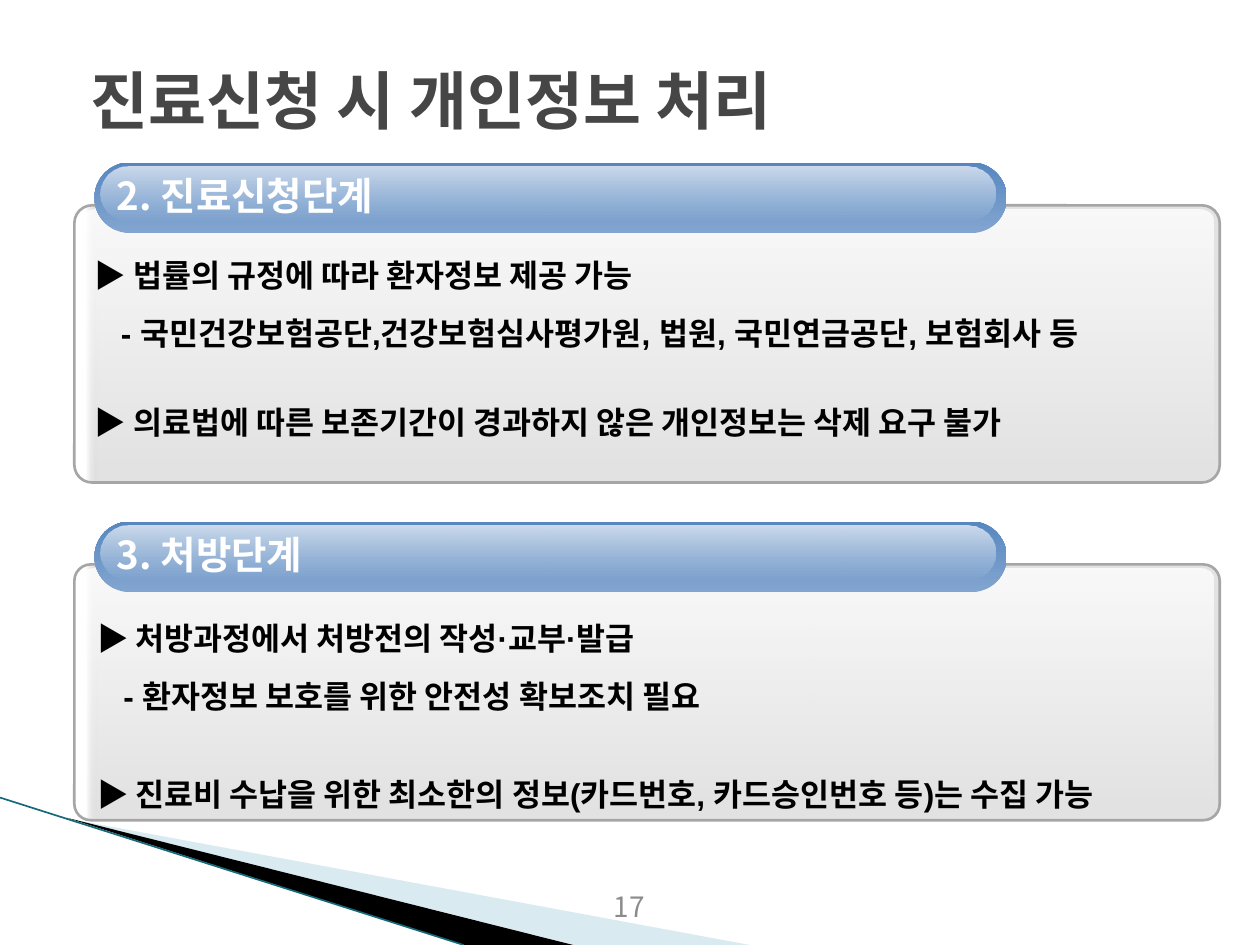
from lxml import etree
from pptx import Presentation
from pptx.dml.color import RGBColor
from pptx.enum.shapes import MSO_CONNECTOR, MSO_SHAPE
from pptx.enum.text import MSO_ANCHOR, MSO_AUTO_SIZE, PP_ALIGN
from pptx.oxml.ns import qn
from pptx.util import Inches, Pt

ROUNDED = MSO_SHAPE.ROUNDED_RECTANGLE
STRAIGHT = MSO_CONNECTOR.STRAIGHT
TOP, MIDDLE = MSO_ANCHOR.TOP, MSO_ANCHOR.MIDDLE
LEFT, CENTER = PP_ALIGN.LEFT, PP_ALIGN.CENTER
NO_AUTOFIT = MSO_AUTO_SIZE.NONE

COLUMNS, ROWS = 100, 75
CELL = Inches(10) // COLUMNS
KOREAN, LATIN = "Noto Sans CJK KR", "Arial"
COLORS = {
    "white": "FFFFFF", "black": "000000", "title": "464646", "number": "8C8C8C",
    "panel": "BFBFBF", "border": "A6A6A6", "pill_light": "82A5D0",
    "pill_dark": "5887C0", "wedge": "A0CBDC", "teal": "16697A",
}
SECTIONS = [
    {"box": (5.9, 12.9, 90.9, 25.4), "body_at": (0.6, 6.3), "heading": "2. 진료신청단계",
     "gap": 24, "lines": [
         "▶ 법률의 규정에 따라 환자정보 제공 가능",
         "- 국민건강보험공단,건강보험심사평가원, 법원, 국민연금공단, 보험회사 등",
         "▶ 의료법에 따른 보존기간이 경과하지 않은 개인정보는 삭제 요구 불가"]},
    {"box": (5.9, 41.4, 90.9, 23.7), "body_at": (0.8, 6.6), "heading": "3. 처방단계",
     "gap": 29, "lines": [
         "▶ 처방과정에서 처방전의 작성·교부·발급",
         "- 환자정보 보호를 위한 안전성 확보조치 필요",
         "▶ 진료비 수납을 위한 최소한의 정보(카드번호, 카드승인번호 등)는 수집 가능"]},
]


def grid(*cells):
    return [round(cell * CELL) for cell in cells]


def color(name):
    return RGBColor.from_string(COLORS[name])


def set_alpha(fill_color, percent):
    """Set the opacity of a colour element (a:srgbClr)."""
    etree.SubElement(fill_color, qn("a:alpha")).set("val", str(percent * 1000))


def add_rounded(slide, box, adjustment, stops, angle, line=None):
    """Add a gradient panel; each stop is (position, colour, opacity)."""
    shape = slide.shapes.add_shape(ROUNDED, *grid(*box))
    shape.shadow.inherit = False
    shape.adjustments[0] = adjustment
    shape.fill.gradient()
    shape.fill.gradient_angle = angle
    for stop, (position, name, opacity) in zip(shape.fill.gradient_stops, stops):
        stop.position = position
        stop.color.rgb = color(name)
    elements = shape.element.spPr.iter(qn("a:srgbClr"))
    for element, (position, name, opacity) in zip(list(elements), stops):
        set_alpha(element, opacity)
    if line:
        shape.line.color.rgb = color(line)
        shape.line.width = Pt(1.5)
    else:
        shape.line.fill.background()


def write(shape, box, lines, size, name, font=KOREAN, bold=True, anchor=MIDDLE,
          align=LEFT, spacing=None):
    """Place a text shape, fill it with lines and return its paragraphs."""
    shape.left, shape.top, shape.width, shape.height = grid(*box)
    frame = shape.text_frame
    frame.word_wrap = True
    frame.auto_size = NO_AUTOFIT
    frame.vertical_anchor = anchor
    frame.text = "\n".join(lines)
    for paragraph in frame.paragraphs:
        paragraph.alignment = align
        paragraph.space_before = Pt(0)
        if spacing:
            paragraph.line_spacing = Pt(spacing)
        run_font = paragraph.runs[0].font
        run_font.size, run_font.bold, run_font.name = Pt(size), bold, font
        run_font.color.rgb = color(name)
        properties = paragraph.runs[0]._r.get_or_add_rPr()
        etree.SubElement(properties, qn("a:ea")).set("typeface", KOREAN)
    return frame.paragraphs


def add_text(slide, box, text, **formats):
    return write(slide.shapes.add_textbox(*grid(*box)), box, [text], **formats)


def add_wedge(slide, points, name, opacity=100):
    builder = slide.shapes.build_freeform(*grid(*points[0]))
    builder.add_line_segments([grid(*point) for point in points[1:]])
    shape = builder.convert_to_shape()
    shape.shadow.inherit = False
    shape.fill.solid()
    shape.fill.fore_color.rgb = color(name)
    set_alpha(next(shape.element.spPr.iter(qn("a:srgbClr"))), opacity)
    shape.line.fill.background()


def add_corner(slide):
    """Draw the wedges that cross the lower left corner."""
    add_wedge(slide, [(5.5, 65), (59.5, ROWS), (45.6, ROWS)], "wedge", 40)
    add_wedge(slide, [(5.3, 64.9), (45.5, ROWS), (36.8, ROWS)], "black")
    line = slide.shapes.add_connector(STRAIGHT, *grid(0, 63.3, 36.8, ROWS))
    line.line.color.rgb = color("teal")
    line.line.width = Pt(0.95)
    etree.SubElement(line.element.spPr, qn("a:effectLst"))


def add_heading(slide, box, text):
    left, top, width, height = box
    add_rounded(slide, box, 0.5, [(0, "pill_light", 100), (1, "pill_dark", 100)], 90)
    add_rounded(slide, (left + 0.5, top + 0.3, width - 1.4, height - 1.3), 0.5,
                [(0, "white", 71), (1, "white", 0)], 270)
    add_text(slide, (left + 0.8, top + 1.1, width - 3.4, 3.8), text,
             size=22, name="white", spacing=20)


def write_body(slide, placeholder, box, lines, gap):
    """Write a main point, its detail and, after a gap, a second main point."""
    slide.shapes.element.append(placeholder.element)
    paragraphs = write(placeholder, box, lines, size=18, name="black", font=LATIN,
                       anchor=TOP, spacing=26)
    for paragraph, before, margin, indent in zip(
            paragraphs, (0, 6, gap), (3.1, 2.1, 3.1), (-3.1, 0, -3.1)):
        paragraph.space_before, paragraph.space_after = Pt(before), Pt(1)
        properties = paragraph._p.get_or_add_pPr()
        properties.set("marL", str(grid(margin)[0]))
        properties.set("indent", str(grid(indent)[0]))
        etree.SubElement(properties, qn("a:buNone"))


def add_section(slide, placeholder, box, body_at, heading, gap, lines):
    left, top, width, height = box
    panel_top, panel_height = top + 3.4, height - 3.4
    add_rounded(slide, (left, panel_top, width, panel_height), 0.064,
                [(0.01, "white", 100), (0.02, "panel", 45)], 0, line="border")
    add_rounded(slide, (left + 0.6, panel_top + 0.3, width - 1.1, panel_height - 1.3),
                0.051, [(0, "white", 81), (1, "white", 0)], 270)
    add_heading(slide, (left + 1.6, top, 72.4, 5.6), heading)
    across, down = body_at
    write_body(slide, placeholder, (left + across, top + down, 91.7, height - down),
               lines, gap)


def main():
    presentation = Presentation()
    presentation.slide_width, presentation.slide_height = grid(COLUMNS, ROWS)
    slide = presentation.slides.add_slide(
        presentation.slide_layouts.get_by_name("Two Content"))
    title, *bodies = slide.placeholders
    add_corner(slide)
    write(title, (6.2, 4.7, 88.9, 6.3), ["진료신청 시 개인정보 처리"],
          size=36, name="title")
    for placeholder, section in zip(bodies, SECTIONS):
        add_section(slide, placeholder, **section)
    add_text(slide, (38.3, 70.1, 23.3, 4), "17", size=16, name="number",
             bold=False, anchor=TOP, align=CENTER)
    presentation.save("out.pptx")


if __name__ == "__main__":
    main()
